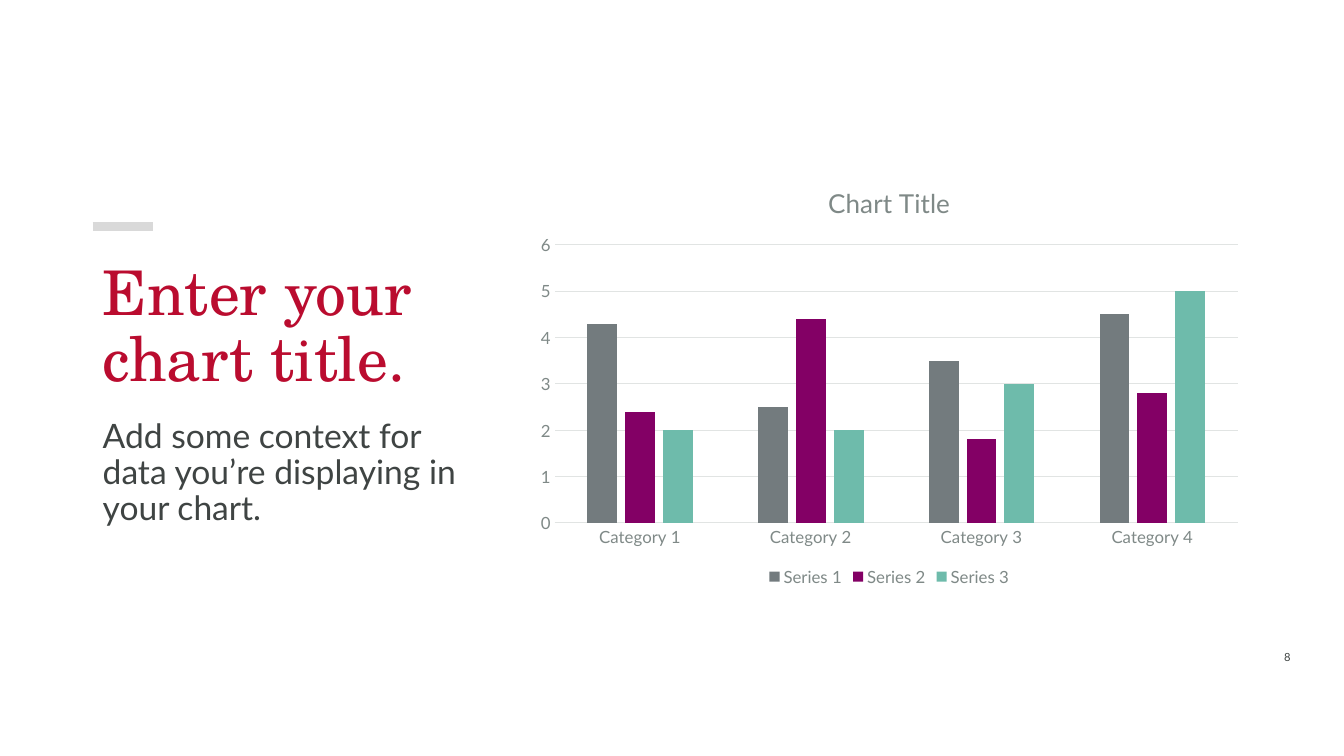
from dataclasses import dataclass

from lxml.etree import SubElement
from pptx import Presentation
from pptx.chart.data import CategoryChartData
from pptx.dml.color import RGBColor
from pptx.enum.chart import XL_CHART_TYPE as Kind
from pptx.enum.chart import XL_LEGEND_POSITION as Place
from pptx.enum.chart import XL_TICK_MARK as Tick
from pptx.enum.shapes import MSO_CONNECTOR as Link
from pptx.enum.text import MSO_ANCHOR as Anchor
from pptx.enum.text import PP_ALIGN as Align
from pptx.oxml.ns import qn
from pptx.util import Pt

SCALE = 9144  # EMU per px, 100 px to the inch


@dataclass(frozen=True)
class Theme:
    serif: str = "TeX Gyre Schola"
    sans: str = "Lato"
    red: str = "BA0C2F"
    ink: str = "3F4443"
    gray: str = "7F8987"
    grid: str = "E1E4E3"
    bar: str = "D9D9D9"
    fills: tuple = ("737B7E", "830065", "6EBBAB")
    head: float = 44
    body: float = 24
    title: float = 18.6
    label: float = 12
    base: float = 10
    page: float = 8


THEME = Theme()
CATS = [f"Category {n}" for n in range(1, 5)]
ROWS = [(4.3, 2.5, 3.5, 4.5), (2.4, 4.4, 1.8, 2.8), (2, 2, 3, 5)]


def px(*nums):
    return [n * SCALE for n in nums]


def rgb(code):
    return RGBColor.from_string(code)


def style(font, face, size, color):
    font.name = face
    font.size = Pt(size)
    font.bold = False
    font.color.rgb = rgb(color)


def stroke(line, color, width):
    line.color.rgb = rgb(color)
    line.width = Pt(width)


def add_text(slide, box, text, face, size, color, space=1.0,
             align=Align.LEFT, anchor=Anchor.TOP):
    frame = slide.shapes.add_textbox(*px(*box)).text_frame
    frame.word_wrap = True
    frame.vertical_anchor = anchor
    frame.text = text
    para = frame.paragraphs[0]
    para.alignment = align
    para.line_spacing = space
    style(para.runs[0].font, face, size, color)


def add_intro(slide, box):
    """Accent bar, heading and context, stacked in the box."""
    left, top, width, high = box
    bar = slide.shapes.add_connector(
        Link.STRAIGHT, *px(left, top, left + 60, top))
    stroke(bar.line, THEME.bar, 6.25)
    SubElement(bar._element.spPr, qn("a:effectLst"))
    add_text(slide, (left, top + 30, width, 145), "Enter your chart title.",
             THEME.serif, THEME.head, THEME.red, 0.9)
    add_text(slide, (left, top + 186, width, high - 186),
             "Add some context for data you’re displaying in your chart.",
             THEME.sans, THEME.body, THEME.ink, 0.9)


def add_bars(slide, box):
    data = CategoryChartData()
    data.categories = CATS
    for n, row in enumerate(ROWS, 1):
        data.add_series(f"Series {n}", row)
    chart = slide.shapes.add_chart(
        Kind.COLUMN_CLUSTERED, *px(*box), data).chart
    style(chart.font, THEME.sans, THEME.base, THEME.ink)

    chart.has_title = True
    frame = chart.chart_title.text_frame
    frame.text = "Chart Title"
    style(frame.paragraphs[0].runs[0].font,
          THEME.sans, THEME.title, THEME.gray)
    chart.chart_title.include_in_layout = False

    chart.has_legend = True
    chart.legend.position = Place.BOTTOM
    chart.legend.include_in_layout = False
    style(chart.legend.font, THEME.sans, THEME.label, THEME.gray)

    plot = chart.plots[0]
    plot.gap_width = 219
    plot.overlap = -27
    plot.vary_by_categories = False
    for part, color in zip(plot.series, THEME.fills):
        part.format.fill.solid()
        part.format.fill.fore_color.rgb = rgb(color)

    cat, val = chart.category_axis, chart.value_axis
    for axis in (cat, val):
        axis.major_tick_mark = axis.minor_tick_mark = Tick.NONE
        style(axis.tick_labels.font, THEME.sans, THEME.label, THEME.gray)
    stroke(cat.format.line, THEME.grid, 0.75)
    val.format.line.fill.background()
    val.has_major_gridlines = True
    stroke(val.major_gridlines.format.line, THEME.grid, 0.75)
    val.minimum_scale, val.maximum_scale, val.major_unit = 0, 6, 1


def add_page(slide, box):
    add_text(slide, box, "8", THEME.sans, THEME.page, THEME.ink,
             align=Align.RIGHT, anchor=Anchor.MIDDLE)


def main():
    deck = Presentation()
    deck.slide_width, deck.slide_height = px(1333, 750)
    slide = deck.slides.add_slide(deck.slide_layouts[6])
    add_intro(slide, (92, 225, 398, 452))
    add_bars(slide, (522, 164, 720, 422))
    add_page(slide, (1236, 632, 54, 40))
    deck.save("out.pptx")


if __name__ == "__main__":
    main()
